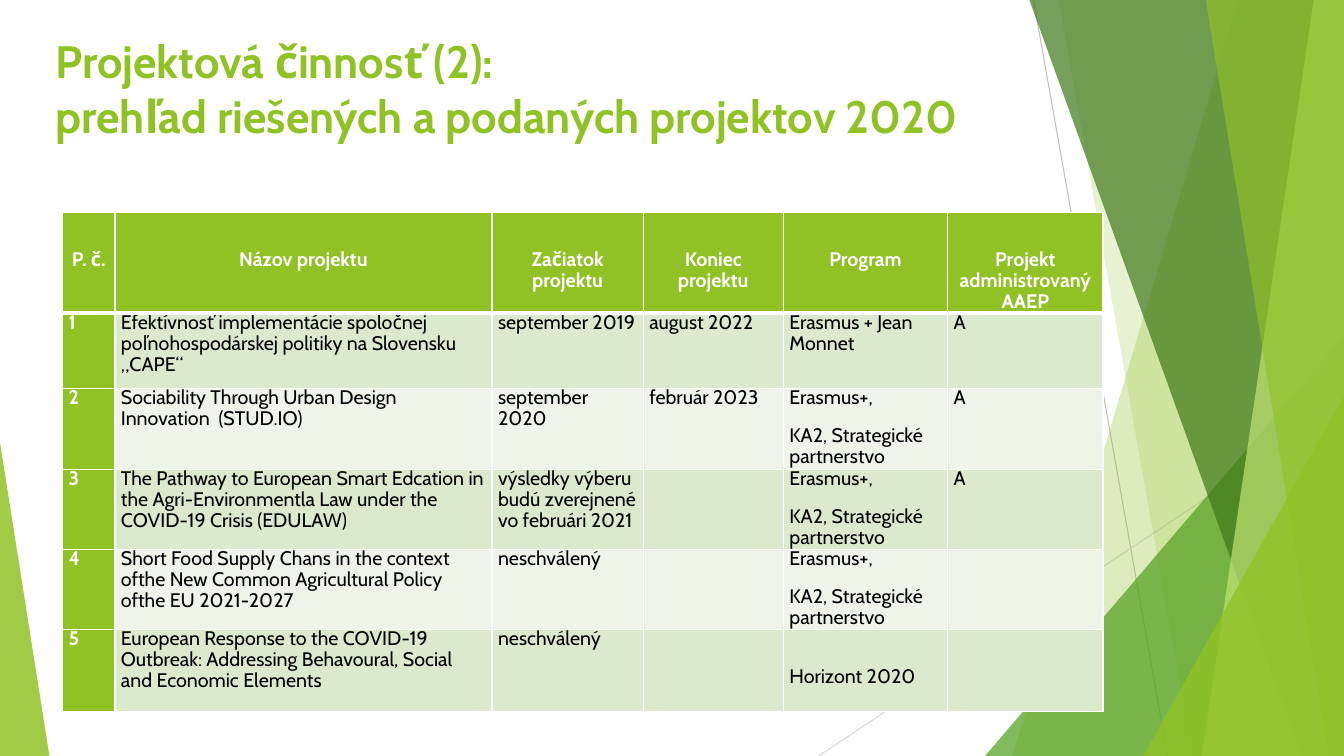
from lxml.etree import SubElement
from pptx import Presentation
from pptx.dml.color import RGBColor
from pptx.enum.shapes import MSO_CONNECTOR as CONN, MSO_SHAPE as SHAPE
from pptx.enum.text import MSO_ANCHOR as ANCHOR, MSO_AUTO_SIZE as AUTO, PP_ALIGN as ALIGN
from pptx.oxml.ns import qn
from pptx.util import Inches, Pt

FONT = "Cabin"
GREEN, WHITE, BLACK = "90C226", "FFFFFF", "000000"
BANDS = ["DBE9CD", "EEF4E8"]
WIDTH, HEIGHT = 13.33, 7.5

COLUMNS = [0.52, 3.74, 1.5, 1.39, 1.63, 1.54]
ROWS = [0.99, 0.75, 0.8, 0.8, 0.79, 0.81]
HEADER = ["P. č.", "Názov projektu", "Začiatok projektu", "Koniec projektu",
          "Program", "Projekt administrovaný AAEP"]
STRATEGIC = "Erasmus+,\nKA2, Strategické partnerstvo"
PROJECTS = [
    ["Efektívnosť implementácie spoločnej poľnohospodárskej politiky na Slovensku „CAPE“",
     "september 2019", "august 2022", "Erasmus + Jean Monnet", "A"],
    ["Sociability Through Urban Design Innovation  (STUD.IO)",
     "september 2020", "február 2023", STRATEGIC, "A"],
    ["The Pathway to European Smart Edcation in the Agri-Environmentla Law "
     "under the COVID-19 Crisis (EDULAW)",
     "výsledky výberu budú zverejnené vo februári 2021", "", STRATEGIC, "A"],
    ["Short Food Supply Chans in the context ofthe New Common Agricultural Policy "
     "ofthe EU 2021-2027", "neschválený", "", STRATEGIC, ""],
    ["European Response to the COVID-19 Outbreak: Addressing Behavoural, Social "
     "and Economic Elements", "neschválený", "", "Horizont 2020", ""],
]
LOWERED = "Horizont 2020"


def rgb(color):
    return RGBColor.from_string(color)


def paint(shape, color, opacity):
    shape.shadow.inherit = False
    shape.fill.solid()
    shape.fill.fore_color.rgb = rgb(color)
    shape.line.fill.background()
    srgb = shape.fill._xPr.find(qn("a:solidFill")).find(qn("a:srgbClr"))
    SubElement(srgb, qn("a:alpha")).set("val", str(opacity * 1000))


def add_line(s, start, end, color):
    line = s.shapes.add_connector(CONN.STRAIGHT, *map(Inches, start + end))
    line.line.color.rgb = rgb(color)
    line.line.width = Pt(0.75)
    SubElement(line._element.spPr, qn("a:effectLst"))


def add_slab(s, top_x, bottom_x, color, opacity):
    points = [(top_x, 0), (WIDTH, 0), (WIDTH, HEIGHT), (bottom_x, HEIGHT)]
    points = [(Inches(x), Inches(y)) for x, y in points]
    builder = s.shapes.build_freeform(*points[0])
    builder.add_line_segments(points[1:])
    paint(builder.convert_to_shape(), color, opacity)


def add_corner(s, left, top, width, apex, color, opacity):
    box = map(Inches, (left, top, width, HEIGHT - top))
    sp = s.shapes.add_shape(SHAPE.ISOSCELES_TRIANGLE, *box)
    sp.adjustments[0] = apex
    paint(sp, color, opacity)


def add_backdrop(s):
    add_line(s, (10.25, 0), (11.58, HEIGHT), "BFBFBF")
    add_line(s, (WIDTH, 4.03), (8.12, HEIGHT), "D9D9D9")
    add_slab(s, 12.28, 10.04, GREEN, 30)
    add_slab(s, 10.5, 11.83, GREEN, 20)
    add_corner(s, 9.77, 3.33, 3.56, 1, "54A021", 72)
    add_slab(s, 10.21, 12.91, "3F7819", 70)
    add_slab(s, 13.03, 11.92, "C0E474", 70)
    add_slab(s, 11.96, 13.18, GREEN, 65)
    add_corner(s, 11.34, 3.93, 1.99, 1, GREEN, 80)
    add_corner(s, 0, 4.39, 0.49, 0, GREEN, 85)


def add_title(s, left, top, width, height):
    title = s.shapes.title
    title.left, title.top = Inches(left), Inches(top)
    title.width, title.height = Inches(width), Inches(height)
    tf = title.text_frame
    tf.text = "Projektová činnosť (2):\vprehľad riešených a podaných projektov 2020"
    tf.word_wrap = True
    tf.auto_size = AUTO.NONE
    tf.vertical_anchor = ANCHOR.TOP
    p = tf.paragraphs[0]
    p.alignment = ALIGN.LEFT
    p.font.name, p.font.size, p.font.bold = FONT, Pt(32.4), True
    p.font.color.rgb = rgb(GREEN)


def add_borders(cell, bottom):
    tcPr = cell._tc.get_or_add_tcPr()
    sides = [("a:lnL", 1), ("a:lnR", 1), ("a:lnT", 1), ("a:lnB", bottom)]
    for side, width in sides:
        ln = SubElement(tcPr, qn(side))
        ln.set("w", str(Pt(width)))
        SubElement(SubElement(ln, qn("a:solidFill")), qn("a:srgbClr")).set("val", WHITE)


def fill_cell(cell, text, fill, is_header, is_strong):
    add_borders(cell, 3 if is_header else 1)
    cell.fill.solid()
    cell.fill.fore_color.rgb = rgb(fill)
    cell.margin_left = cell.margin_right = Inches(0.06)
    cell.margin_top = Inches(0.37 if is_header or text == LOWERED else 0)
    cell.margin_bottom = 0
    cell.text = text
    for p in cell.text_frame.paragraphs:
        p.alignment = ALIGN.CENTER if is_header else ALIGN.LEFT
        p.line_spacing = Pt(15)
        p.space_before = p.space_after = Pt(6)
        p.font.name, p.font.size, p.font.bold = FONT, Pt(14), is_strong
        p.font.color.rgb = rgb(WHITE if is_strong else BLACK)


def add_projects(s, left, top):
    rows = [HEADER] + [[str(n)] + row for n, row in enumerate(PROJECTS, 1)]
    box = map(Inches, (left, top, sum(COLUMNS), sum(ROWS)))
    table = s.shapes.add_table(len(ROWS), len(COLUMNS), *box).table
    for column, width in zip(table.columns, COLUMNS):
        column.width = Inches(width)
    for row, height in zip(table.rows, ROWS):
        row.height = Inches(height)
    for i, row in enumerate(rows):
        for j, text in enumerate(row):
            is_strong = i == 0 or j == 0
            fill = GREEN if is_strong else BANDS[(i - 1) % 2]
            fill_cell(table.cell(i, j), text, fill, i == 0, is_strong)


def main():
    prs = Presentation()
    prs.slide_width, prs.slide_height = Inches(WIDTH), Inches(HEIGHT)
    s = prs.slides.add_slide(prs.slide_layouts[5])
    add_backdrop(s)
    add_title(s, 0.45, 0.28, 9.89, 1.44)
    add_projects(s, 0.62, 2.11)
    prs.save("out.pptx")


if __name__ == "__main__":
    main()
